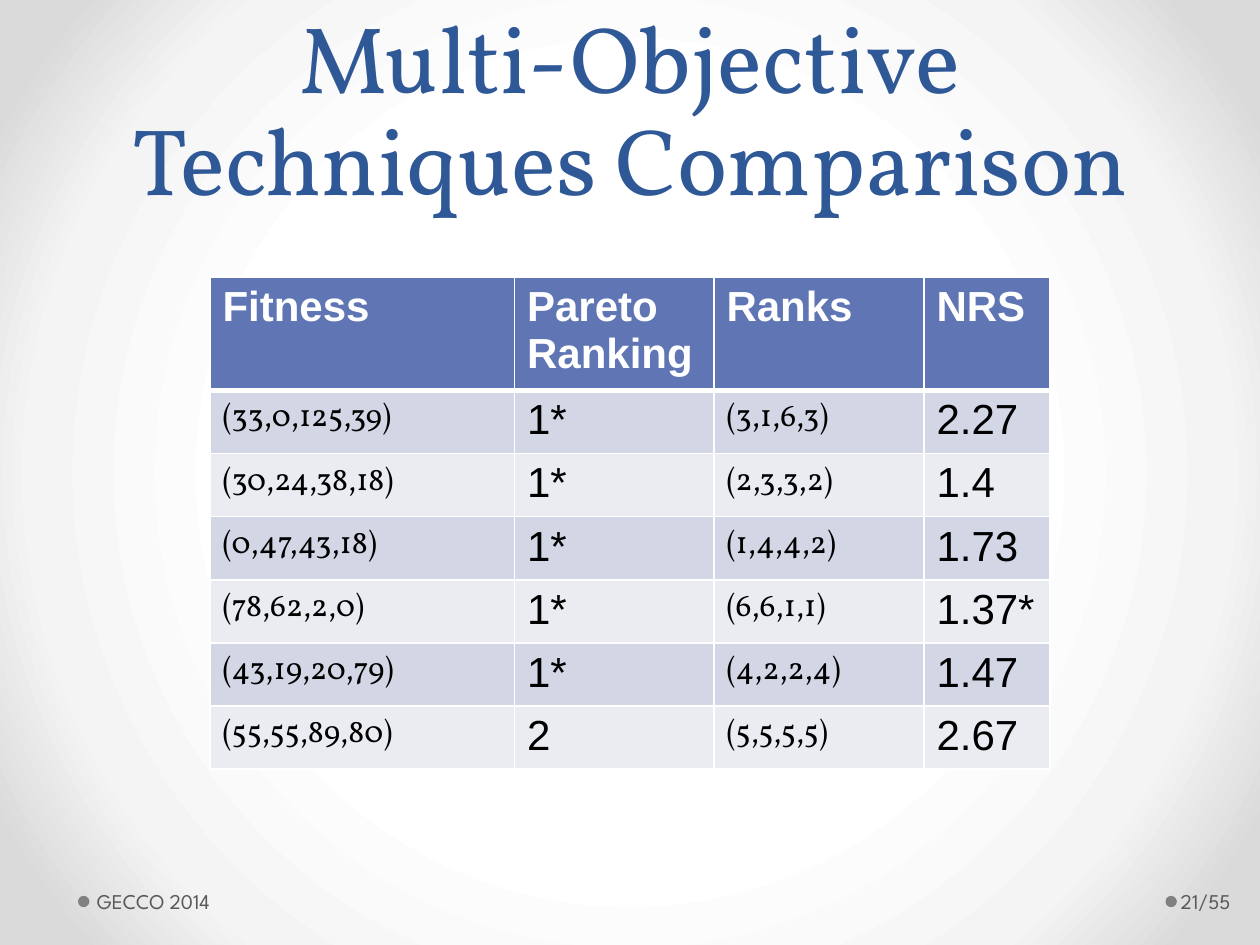
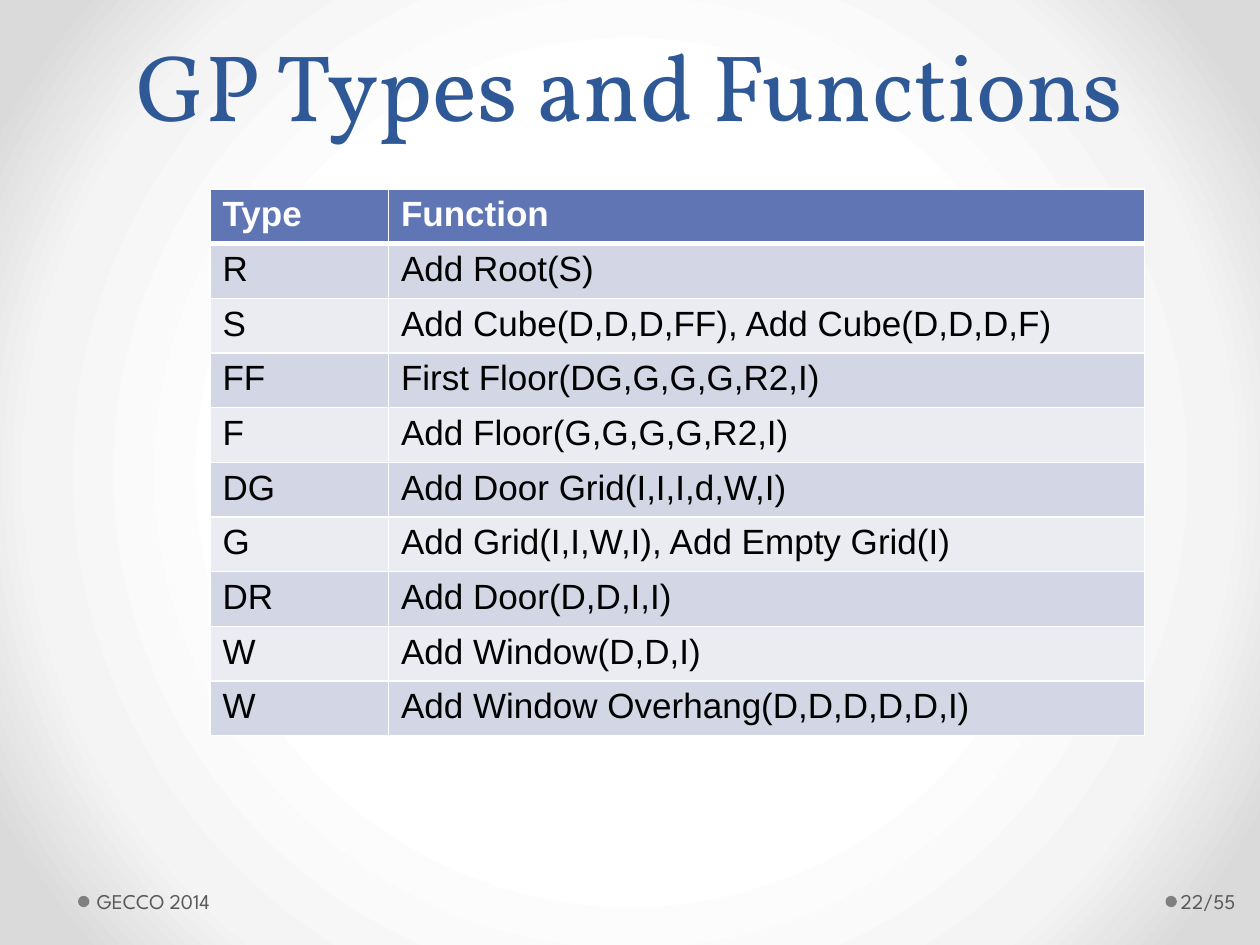
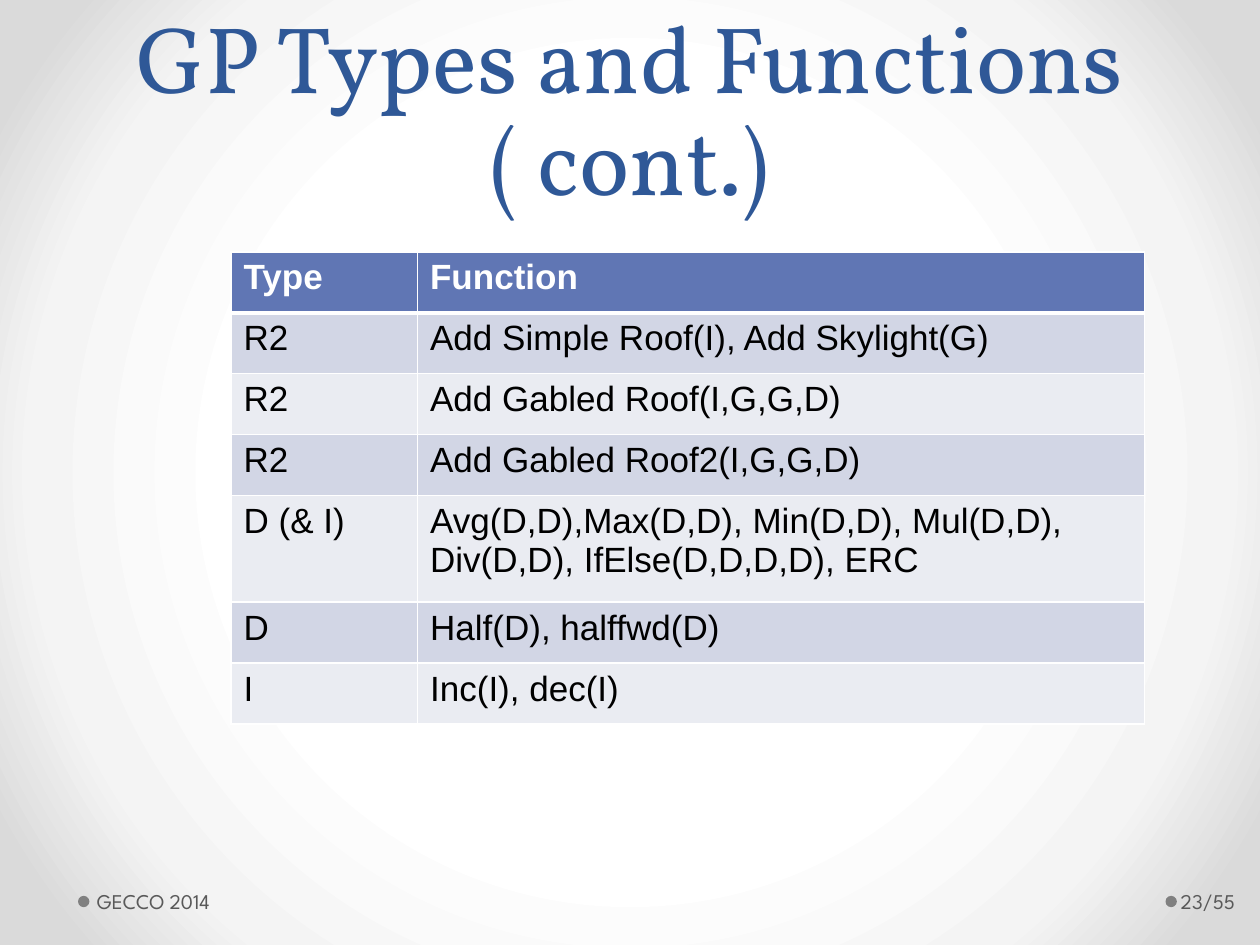
import dataclasses

import lxml.etree
import pptx
import pptx.dml.color
import pptx.enum.shapes
import pptx.enum.text
import pptx.oxml.ns
import pptx.util

Pt = pptx.util.Pt
qn = pptx.oxml.ns.qn
Align = pptx.enum.text.PP_ALIGN
Anchor = pptx.enum.text.MSO_ANCHOR


@dataclasses.dataclass(frozen=True)
class Theme:
    title_font: str = "Vollkorn"
    table_font: str = "Arial"
    footer_font: str = "League Spartan"
    title_size: int = 54
    title_spacing: int = 58
    vector_size: int = 18
    footer_size: int = 12
    title: str = "2F5897"
    header: str = "6076B4"
    bands: tuple = ("D2D6E5", "EAECF2")
    white: str = "FFFFFF"
    black: str = "000000"
    footer: str = "595959"
    dot: str = "808080"
    backdrop: tuple = ((50, "FFFFFF"), (76, "F4F4F4"), (92, "DADADA"))


def rgb(color):
    return pptx.dml.color.RGBColor.from_string(color)


def add_node(parent, tag, **attributes):
    values = {name: str(value) for name, value in attributes.items()}
    return lxml.etree.SubElement(parent, qn(tag), values)


def write_text(frame, text, *, font, size, color, bold=False,
               align=Align.LEFT, spacing=None, indent=0):
    """Fill a text frame with one paragraph; a vertical tab breaks the line."""
    para = frame.paragraphs[0]
    para.text = text
    para.alignment = align
    if spacing:
        para.line_spacing = Pt(spacing)
    if indent:
        para._p.get_or_add_pPr().set("indent", str(Pt(indent)))
    for span in para.runs:
        span.font.name = font
        span.font.size = Pt(size)
        span.font.bold = bold
        span.font.color.rgb = rgb(color)


class SlideBuilder:
    def __init__(self, deck, theme):
        self.deck = deck
        self.theme = theme
        self.slide = None

    def start(self, title, title_top, page_number, first_indent=0):
        """Open a slide with everything the slides share."""
        theme = self.theme
        self.slide = self.deck.slides.add_slide(self.deck.slide_layouts[6])
        self.background()
        for left in (666, 44.6):
            self.dot(left, 511.9, 6.5)
        self.text_box((36, title_top, 648, 84), title, anchor=Anchor.BOTTOM,
                      font=theme.title_font, size=theme.title_size,
                      color=theme.title, align=Align.CENTER,
                      spacing=theme.title_spacing, indent=first_indent)
        self.footer("GECCO 2014", 51.8, 224, (3.6, 7.2))
        self.footer(f"{page_number}/55", 672.5, 44, (2.2, 3.6))

    def background(self):
        self.slide.background.fill.gradient()
        gradient = self.slide.element.find(".//" + qn("a:gradFill"))
        gradient.clear()
        gradient.set("rotWithShape", "1")
        stops = add_node(gradient, "a:gsLst")
        for position, color in self.theme.backdrop:
            stop = add_node(stops, "a:gs", pos=position * 1000)
            add_node(stop, "a:srgbClr", val=color)
        circle = add_node(gradient, "a:path", path="circle")
        add_node(circle, "a:fillToRect", l=50000, t=50000, r=50000, b=50000)

    def dot(self, left, top, size):
        shape = self.slide.shapes.add_shape(
            pptx.enum.shapes.MSO_SHAPE.OVAL,
            Pt(left), Pt(top), Pt(size), Pt(size))
        shape.shadow.inherit = False
        shape.fill.solid()
        shape.fill.fore_color.rgb = rgb(self.theme.dot)
        shape.line.fill.background()

    def text_box(self, area, text, *, anchor, margins=(7.2, 7.2), **style):
        box = self.slide.shapes.add_textbox(*map(Pt, area))
        frame = box.text_frame
        frame.word_wrap = True
        frame.vertical_anchor = anchor
        frame.margin_left, frame.margin_right = map(Pt, margins)
        write_text(frame, text, **style)

    def footer(self, text, left, width, margins):
        theme = self.theme
        self.text_box((left, 500.4, width, 28.8), text, anchor=Anchor.MIDDLE,
                      margins=margins, font=theme.footer_font,
                      size=theme.footer_size, color=theme.footer)

    def table(self, left, top, widths, heights, rows, size, vector_columns=()):
        theme = self.theme
        table = self.slide.shapes.add_table(
            len(rows), len(widths), Pt(left), Pt(top),
            Pt(sum(widths)), Pt(sum(heights))).table
        table.horz_banding = False
        for column, width in zip(table.columns, widths):
            column.width = Pt(width)
        for row_index, values in enumerate(rows):
            table.rows[row_index].height = Pt(heights[row_index])
            is_header = row_index == 0
            fill = theme.header if is_header else theme.bands[(row_index - 1) % 2]
            for column_index, text in enumerate(values):
                cell = table.cell(row_index, column_index)
                self.borders(cell, top=3 if row_index == 1 else 1,
                             bottom=3 if is_header else 1)
                cell.fill.solid()
                cell.fill.fore_color.rgb = rgb(fill)
                is_vector = not is_header and column_index in vector_columns
                write_text(cell.text_frame, text, bold=is_header,
                           font=theme.title_font if is_vector else theme.table_font,
                           size=theme.vector_size if is_vector else size,
                           color=theme.white if is_header else theme.black)

    def borders(self, cell, top, bottom):
        properties = cell._tc.get_or_add_tcPr()
        for side, width in (("L", 1), ("R", 1), ("T", top), ("B", bottom)):
            line = add_node(properties, f"a:ln{side}", w=Pt(width))
            add_node(add_node(line, "a:solidFill"), "a:srgbClr",
                     val=self.theme.white)


def main():
    deck = pptx.Presentation()
    deck.slide_width, deck.slide_height = Pt(720), Pt(540)
    builder = SlideBuilder(deck, Theme())

    # Comparison of techniques
    builder.start("Multi-Objective Techniques Comparison", 42, 21)
    builder.table(120, 158.4, (174, 114, 120, 72), [60] + [34] * 6, [
        ("Fitness", "Pareto Ranking", "Ranks", "NRS"),
        ("(33,0,125,39)", "1*", "(3,1,6,3)", "2.27"),
        ("(30,24,38,18)", "1*", "(2,3,3,2)", "1.4"),
        ("(0,47,43,18)", "1*", "(1,4,4,2)", "1.73"),
        ("(78,62,2,0)", "1*", "(6,6,1,1)", "1.37*"),
        ("(43,19,20,79)", "1*", "(4,2,2,4)", "1.47"),
        ("(55,55,89,80)", "2", "(5,5,5,5)", "2.67"),
    ], size=24, vector_columns=(0, 2))

    # Types and functions
    function_header = ("Type", "Function")
    builder.start("GP Types and Functions", 0, 22)
    builder.table(120, 108, (102, 432), [29.5] * 10, [
        function_header,
        ("R", "Add Root(S)"),
        ("S", "Add Cube(D,D,D,FF), Add Cube(D,D,D,F)"),
        ("FF", "First Floor(DG,G,G,G,R2,I)"),
        ("F", "Add Floor(G,G,G,G,R2,I)"),
        ("DG", "Add Door Grid(I,I,I,d,W,I)"),
        ("G", "Add Grid(I,I,W,I), Add Empty Grid(I)"),
        ("DR", "Add Door(D,D,I,I)"),
        ("W", "Add Window(D,D,I)"),
        ("W", "Add Window Overhang(D,D,D,D,D,I)"),
    ], size=20)

    # Types and functions, continued
    builder.start("GP Types and Functions\v( cont.)", 42, 23, first_indent=-32)
    builder.table(132, 144, (106.6, 415.4), [34.8] * 4 + [61] + [34.8] * 2, [
        function_header,
        ("R2", "Add Simple Roof(I), Add Skylight(G)"),
        ("R2", "Add Gabled Roof(I,G,G,D)"),
        ("R2", "Add Gabled Roof2(I,G,G,D)"),
        ("D (& I)", "Avg(D,D),Max(D,D), Min(D,D), Mul(D,D), "
                    "Div(D,D), IfElse(D,D,D,D), ERC"),
        ("D", "Half(D), halffwd(D)"),
        ("I", "Inc(I), dec(I)"),
    ], size=20)

    deck.save("out.pptx")


if __name__ == "__main__":
    main()
